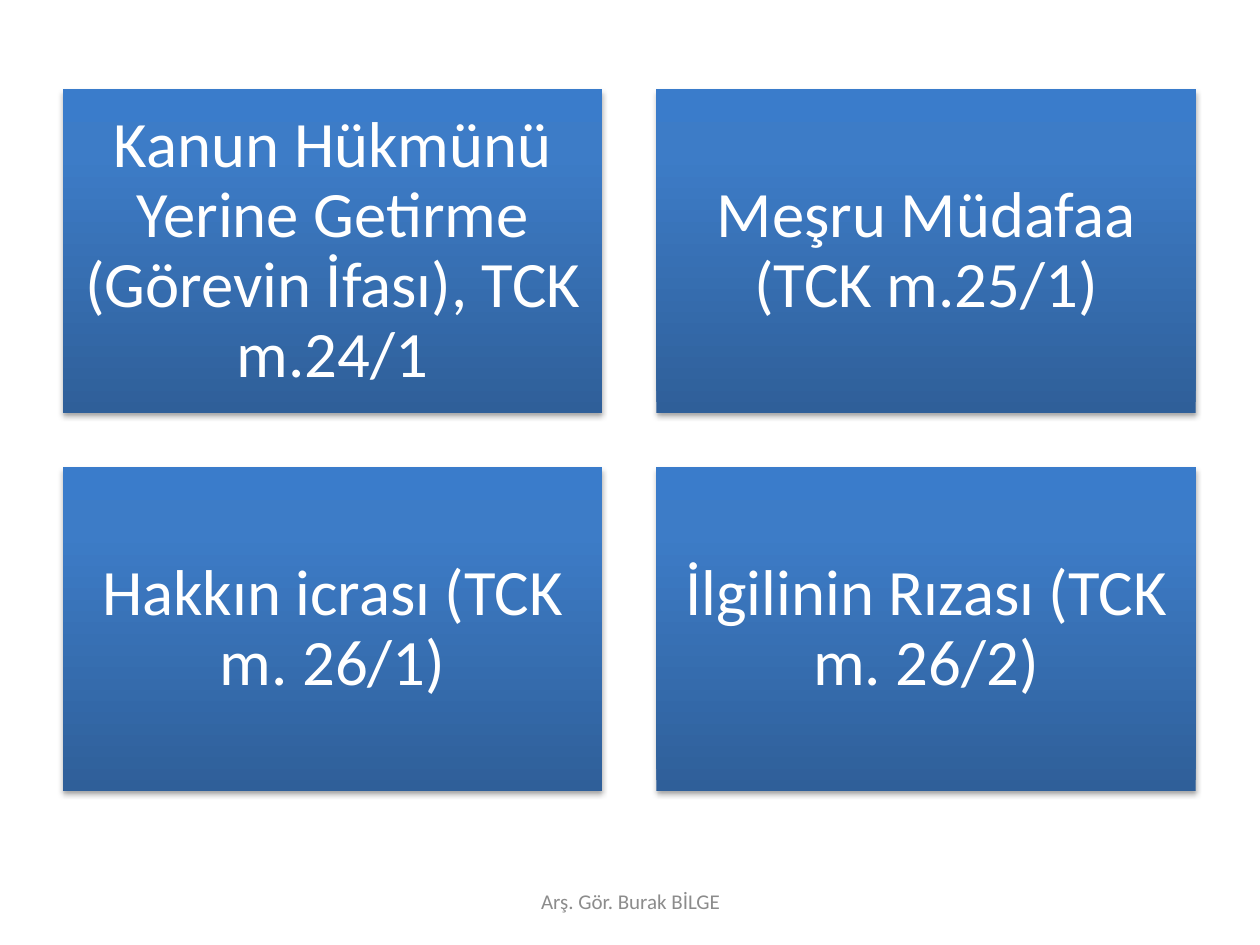
from copy import deepcopy
from pptx import Presentation
from pptx.dml.color import RGBColor
from pptx.enum.shapes import MSO_SHAPE as Shape
from pptx.enum.text import MSO_ANCHOR as Anchor, PP_ALIGN as Align
from pptx.oxml import parse_xml
from pptx.oxml.ns import nsdecls, qn
from pptx.util import Inches, Pt

# Content
GROUNDS = [
    "Kanun Hükmünü Yerine Getirme (Görevin İfası), TCK m.24/1",
    "Meşru Müdafaa (TCK m.25/1)",
    "Hakkın icrası (TCK m. 26/1)",
    "İlgilinin Rızası (TCK m. 26/2)",
]
FOOTER = "Arş. Gör. Burak BİLGE"

# Look and grid, in inches
STOPS = [(0, "2F5F99"), (0.8, "3D7CC7"), (1, "3A7CCB")]
LEFT, TOP, WIDE, HIGH, GAP = 0.5, 0.71, 4.28, 2.57, 0.43
COLS = 2
SHADOW = f"""<a:outerShdw {nsdecls('a')} blurRad="{Pt(3.1)}" dist="{Pt(1.8)}"
 dir="5400000" rotWithShape="0"><a:srgbClr val="000000"><a:alpha val="35000"/>
</a:srgbClr></a:outerShdw>"""


def color(text):
    return RGBColor.from_string(text)


def write(shape, text, size, ink):
    frame = shape.text_frame
    frame.word_wrap = True
    frame.vertical_anchor = Anchor.MIDDLE
    para = frame.paragraphs[0]
    para.text = text
    para.alignment = Align.CENTER
    para.font.name = "Calibri"
    para.font.size = Pt(size)
    para.font.color.rgb = color(ink)
    return frame


def shade(shape):
    fill = shape.fill
    fill.gradient()
    fill.gradient_angle = 90
    stops = next(shape._element.spPr.iter(qn("a:gsLst")))
    stops.insert(1, deepcopy(stops[0]))
    for stop, (place, tone) in zip(fill.gradient_stops, STOPS):
        stop.position = place
        stop.color.rgb = color(tone)
    shape.line.fill.background()
    shape.shadow.inherit = False
    shape._element.spPr.find(qn("a:effectLst")).append(parse_xml(SHADOW))


deck = Presentation()
deck.slide_width, deck.slide_height = Inches(10), Inches(7.5)
slide = deck.slides.add_slide(deck.slide_layouts[6])

# Boxes in a two by two grid
for i, text in enumerate(GROUNDS):
    row, col = divmod(i, COLS)
    box = slide.shapes.add_shape(
        Shape.RECTANGLE,
        Inches(LEFT + col * (WIDE + GAP)), Inches(TOP + row * (HIGH + GAP)),
        Inches(WIDE), Inches(HIGH))
    shade(box)
    frame = write(box, text, 37, "FFFFFF")
    frame.margin_left = frame.margin_right = Inches(0.15)
    frame.margin_top = frame.margin_bottom = Inches(0.15)
    frame.paragraphs[0].line_spacing = 0.9

# Footer
foot = slide.shapes.add_textbox(
    Inches(3.42), Inches(6.95), Inches(3.17), Inches(0.4))
write(foot, FOOTER, 12, "8C8C8C")

deck.save("out.pptx")
